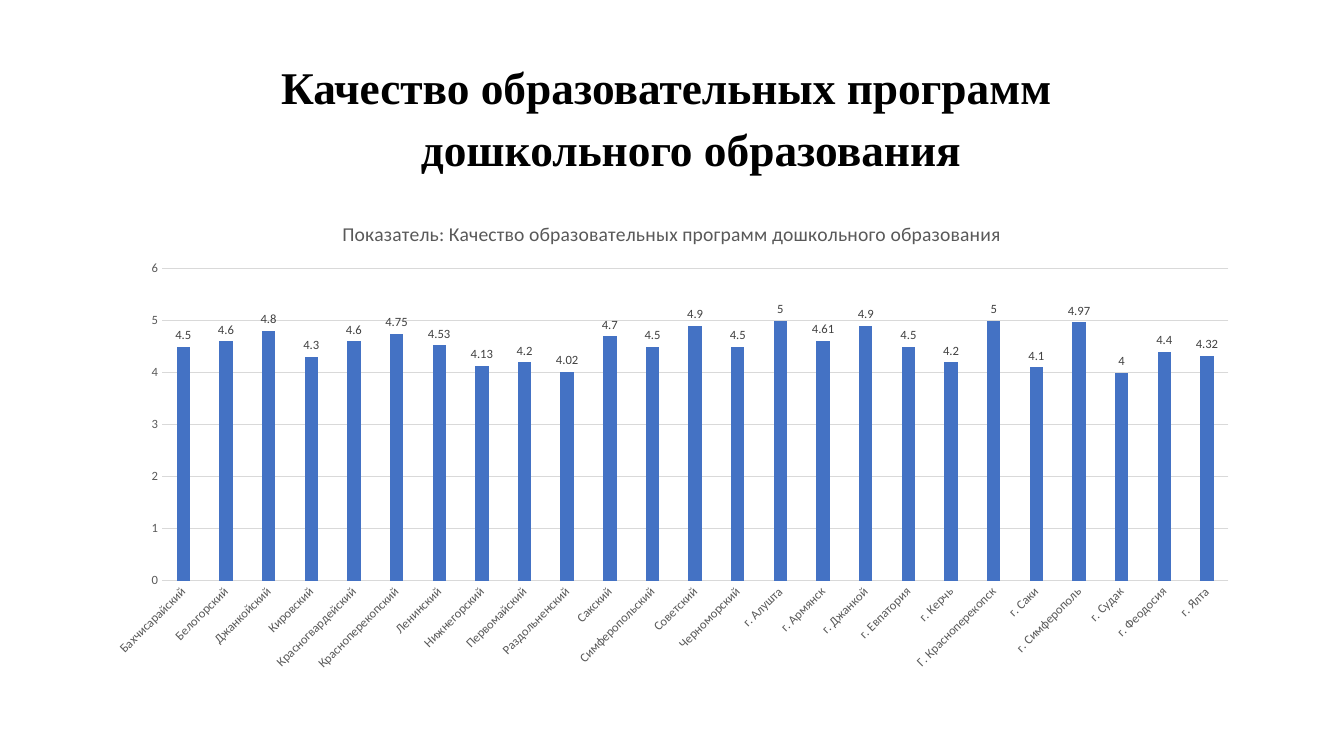
from lxml import etree
from pptx import Presentation
from pptx import util as u
from pptx.chart.data import CategoryChartData
from pptx.dml.color import RGBColor
from pptx.enum import chart as ch, text
from pptx.oxml.ns import qn


def rgb(color):
    return RGBColor.from_string(color)


def style(font, size, color, name="Calibri", bold=False):
    font.size, font.name, font.bold = u.Pt(size), name, bold
    font.color.rgb = rgb(color)


RATINGS = {
    "Бахчисарайский": 4.5, "Белогорский": 4.6, "Джанкойский": 4.8,
    "Кировский": 4.3, "Красногвардейский": 4.6, "Красноперекопский": 4.75,
    "Ленинский": 4.53, "Нижнегорский": 4.13, "Первомайский": 4.2,
    "Раздольненский": 4.02, "Сакский": 4.7, "Симферопольский": 4.5,
    "Советский": 4.9, "Черноморский": 4.5, "г. Алушта": 5,
    "г. Армянск": 4.61, "г. Джанкой": 4.9, "г. Евпатория": 4.5,
    "г. Керчь": 4.2, "Г. Красноперекопск": 5, "г. Саки": 4.1,
    "г. Симферополь": 4.97, "г. Судак": 4, "г. Феодосия": 4.4,
    "г. Ялта": 4.32,
}

prs = Presentation()
prs.slide_width, prs.slide_height = u.Pt(960), u.Pt(540)
s = prs.slides.add_slide(prs.slide_layouts[5])

# Title
sp = s.shapes.title
sp.left, sp.top, sp.width, sp.height = u.Pt(66), u.Pt(28.75), u.Pt(828), u.Pt(104.4)
tf = sp.text_frame
tf.word_wrap = True
tf.auto_size = text.MSO_AUTO_SIZE.NONE
tf.vertical_anchor = text.MSO_ANCHOR.MIDDLE
p = tf.paragraphs[0]
p.text = "Качество образовательных программ \vдошкольного образования"
p.alignment = text.PP_ALIGN.CENTER
p.line_spacing = 1.15
style(p.font, 32.4, "000000", "Times New Roman", True)
pPr = p._p.get_or_add_pPr()
pPr.set("marL", str(u.Pt(27)))
pPr.set("indent", str(u.Pt(-27)))

# Column chart
data = CategoryChartData()
data.categories = list(RATINGS)
data.add_series("Series 1", list(RATINGS.values()))
chart = s.shapes.add_chart(ch.XL_CHART_TYPE.COLUMN_CLUSTERED, u.Pt(66), u.Pt(144),
                           u.Pt(828), u.Pt(342.7), data).chart
style(chart.font, 10, "000000")
chart.has_legend = False
chart.has_title = True
p = chart.chart_title.text_frame.paragraphs[0]
p.text = "Показатель: Качество образовательных программ дошкольного образования"
style(p.font, 14, "595959")
chart.chart_title.include_in_layout = False

# Columns and value labels
plot = chart.plots[0]
plot.gap_width, plot.overlap, plot.vary_by_categories = 219, -27, False
fill = plot.series[0].format.fill
fill.solid()
fill.fore_color.rgb = rgb("4472C4")
plot.has_data_labels = True
labels = plot.data_labels
labels.show_value = True
labels.position = ch.XL_LABEL_POSITION.OUTSIDE_END
style(labels.font, 9, "404040")

# Axes and gridlines
cat, val = chart.category_axis, chart.value_axis
for axis in (cat, val):
    axis.major_tick_mark = axis.minor_tick_mark = ch.XL_TICK_MARK.NONE
    style(axis.tick_labels.font, 9, "595959")
val.minimum_scale, val.maximum_scale, val.major_unit = 0, 6, 1
val.format.line.fill.background()
for line in (cat.format.line, val.major_gridlines.format.line):
    line.color.rgb = rgb("D9D9D9")
    line.width = u.Pt(0.75)
cat._element.find(qn("c:txPr")).find(qn("a:bodyPr")).set("rot", "-2700000")

# Plot area position, as fractions of the chart
area = chart._chartSpace.chart.plotArea
for old in area.findall(qn("c:layout")):
    area.remove(old)
layout = etree.Element(qn("c:layout"))
area.insert(0, layout)
manual = etree.SubElement(layout, qn("c:manualLayout"))
for tag, value in (("layoutTarget", "inner"), ("xMode", "edge"), ("yMode", "edge"),
                   ("x", 0.06), ("y", 0.14), ("w", 0.92), ("h", 0.65)):
    etree.SubElement(manual, qn("c:" + tag)).set("val", str(value))

prs.save("out.pptx")
